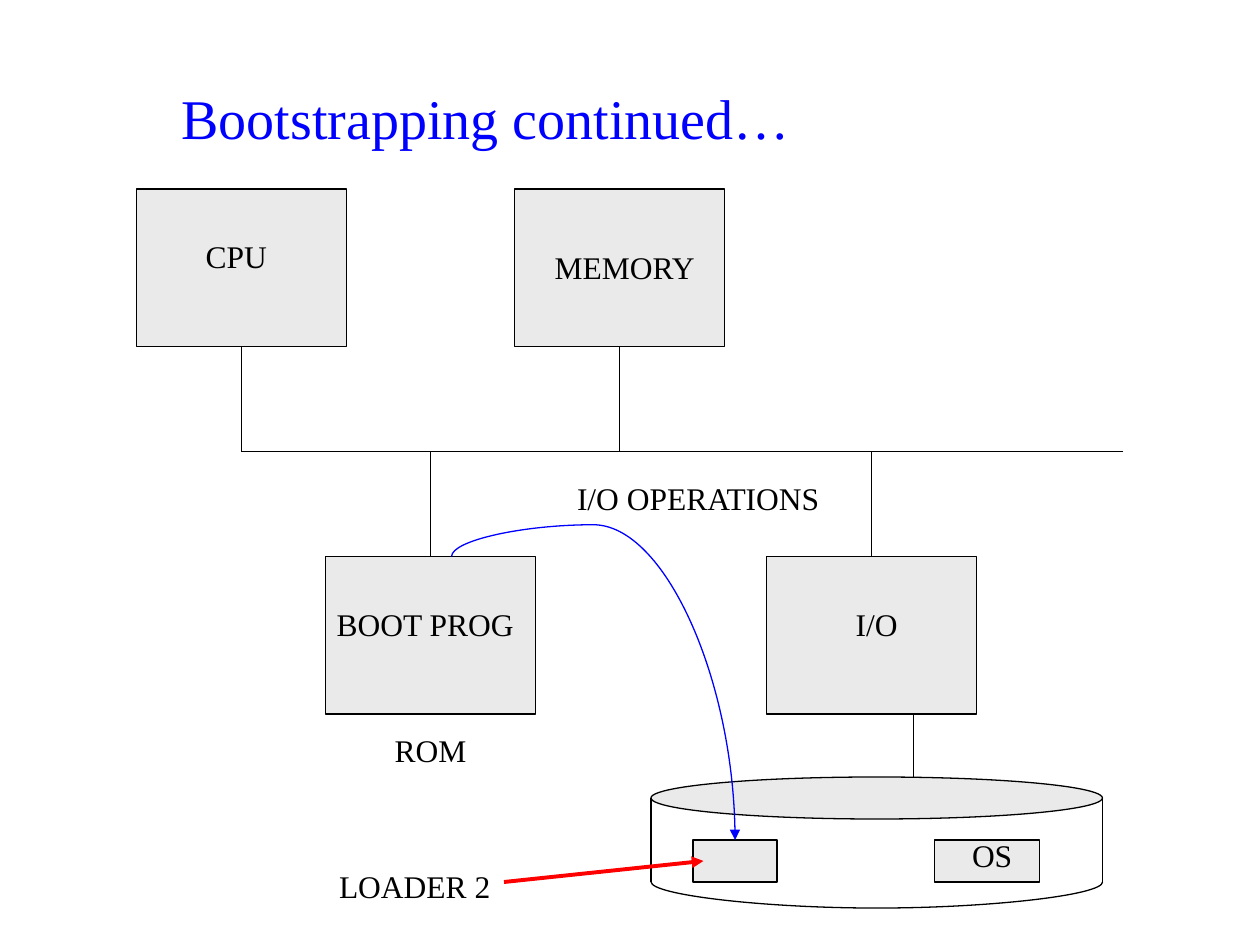
from dataclasses import dataclass

from lxml import etree
from pptx import Presentation
from pptx.dml.color import RGBColor
from pptx.enum.shapes import MSO_CONNECTOR, MSO_SHAPE
from pptx.enum.text import MSO_ANCHOR, MSO_AUTO_SIZE, PP_ALIGN
from pptx.oxml.ns import qn
from pptx.util import Inches, Pt

STRAIGHT, CURVE = MSO_CONNECTOR.STRAIGHT, MSO_CONNECTOR.CURVE
RECTANGLE, ELLIPSE = MSO_SHAPE.RECTANGLE, MSO_SHAPE.OVAL
TOP, BOTTOM = MSO_ANCHOR.TOP, MSO_ANCHOR.BOTTOM
LEFT, CENTER = PP_ALIGN.LEFT, PP_ALIGN.CENTER
GROW = MSO_AUTO_SIZE.SHAPE_TO_FIT_TEXT
TOP_SIDE, BOTTOM_SIDE = 0, 2


@dataclass
class Theme:
    font: str = "Times New Roman"
    title_size: float = 32
    label_size: float = 18
    thin: float = 0.75
    thick: float = 2.25
    ink: RGBColor = RGBColor(0, 0, 0)
    blue: RGBColor = RGBColor(0, 0, 255)
    red: RGBColor = RGBColor(255, 0, 0)
    panel: RGBColor = RGBColor(0xEA, 0xEA, 0xEA)


theme = Theme()
prs = Presentation()
prs.slide_width, prs.slide_height = Inches(10), Inches(7.5)
UNIT = prs.slide_width / 120
slide = prs.slides.add_slide(prs.slide_layouts[5])


def write(holder, text, size=theme.label_size, color=theme.ink, align=CENTER, anchor=TOP):
    frame = holder.text_frame
    frame.word_wrap = True
    frame.auto_size = GROW
    frame.vertical_anchor = anchor
    paragraph = frame.paragraphs[0]
    paragraph.alignment = align
    run = paragraph.add_run()
    run.text = text
    run.font.name = theme.font
    run.font.size = Pt(size)
    run.font.color.rgb = color


def connect(start, end, kind=STRAIGHT, color=theme.ink, width=theme.thin, arrow=False):
    wire = slide.shapes.add_connector(kind, *(round(v * UNIT) for v in (*start, *end)))
    wire.line.color.rgb = color
    wire.line.width = Pt(width)
    if arrow:
        etree.SubElement(wire.line._get_or_add_ln(), qn("a:tailEnd"), type="triangle")
    etree.SubElement(wire._element.spPr, qn("a:effectLst"))
    return wire


title = slide.shapes.title
title.left, title.top, title.width, title.height = (
    round(v * UNIT) for v in (16.1, 7.44, 102, 7.56))
write(title, "Bootstrapping continued…", size=theme.title_size, color=theme.blue,
      align=LEFT, anchor=BOTTOM)

BUS_ROW, UPPER_ROW, LOWER_ROW = 43, 18, 53
UNIT_WIDTH, UNIT_HEIGHT = 20, 15
DISK_LEFT, DISK_RIGHT, DISK_ROW, DISK_BASE = 62, 105, 76, 84

parts = {
    "cpu": (RECTANGLE, 13, UPPER_ROW, UNIT_WIDTH, UNIT_HEIGHT),
    "memory": (RECTANGLE, 49, UPPER_ROW, UNIT_WIDTH, UNIT_HEIGHT),
    "rom": (RECTANGLE, 31, LOWER_ROW, UNIT_WIDTH, UNIT_HEIGHT),
    "io": (RECTANGLE, 73, LOWER_ROW, UNIT_WIDTH, UNIT_HEIGHT),
    "disk top": (ELLIPSE, DISK_LEFT, DISK_ROW - 2, DISK_RIGHT - DISK_LEFT, 4),
    "loader": (RECTANGLE, 66, 80, 8, 4),
    "os": (RECTANGLE, 89, 80, 10, 4),
}
drawn = {}
for part, (outline, *place) in parts.items():
    block = slide.shapes.add_shape(outline, *(round(v * UNIT) for v in place))
    block.shadow.inherit = False
    block.fill.solid()
    block.fill.fore_color.rgb = theme.panel
    block.line.color.rgb = theme.ink
    block.line.width = Pt(theme.thin)
    drawn[part] = block

connect((23, BUS_ROW), (107, BUS_ROW))
for part in ("cpu", "memory", "rom", "io"):
    _, left, row, width, height = parts[part]
    center = left + width / 2
    if row < BUS_ROW:
        connect((center, row + height), (center, BUS_ROW)).begin_connect(drawn[part], BOTTOM_SIDE)
    else:
        connect((center, BUS_ROW), (center, row)).end_connect(drawn[part], TOP_SIDE)

connect((87, LOWER_ROW + UNIT_HEIGHT), (87, DISK_ROW - 2))
for side in (DISK_LEFT, DISK_RIGHT):
    connect((side, DISK_ROW), (side, DISK_BASE))

disk_width, disk_center = DISK_RIGHT - DISK_LEFT, (DISK_LEFT + DISK_RIGHT) / 2
disk_bottom = connect((disk_center + 0.02, DISK_BASE - disk_width / 2),
                      (disk_center, DISK_BASE + disk_width / 2), kind=CURVE)
load_path = connect((70, LOWER_ROW), (43, 80), kind=CURVE, color=theme.blue, arrow=True)
for curve, bend in ((disk_bottom, 13200000), (load_path, -11200)):
    properties = curve._element.spPr
    properties.find(qn("a:xfrm")).set("rot", str(270 * 60000))
    geometry = properties.find(qn("a:prstGeom"))
    geometry.set("prst", "curvedConnector3")
    adjustments = geometry.find(qn("a:avLst"))
    if adjustments is None:
        adjustments = etree.SubElement(geometry, qn("a:avLst"))
    etree.SubElement(adjustments, qn("a:gd"), name="adj1", fmla=f"val {bend}")

connect((48, 84), (67, 82), color=theme.red, width=theme.thick, arrow=True)

for text, left, row, width in (
    ("BOOT PROG", 29, 57, 23),
    ("ROM", 33, 69, 16),
    ("I/O", 72, 57, 23),
    ("LOADER 2", 29, 82, 21),
    ("OS", 89, 79, 11),
    ("I/O OPERATIONS", 48, 45, 37),
    ("CPU", 14, 22, 17),
    ("MEMORY", 48, 23, 23),
):
    label = slide.shapes.add_textbox(*(round(v * UNIT) for v in (left, row, width, 4.8)))
    write(label, text)

prs.save("out.pptx")
